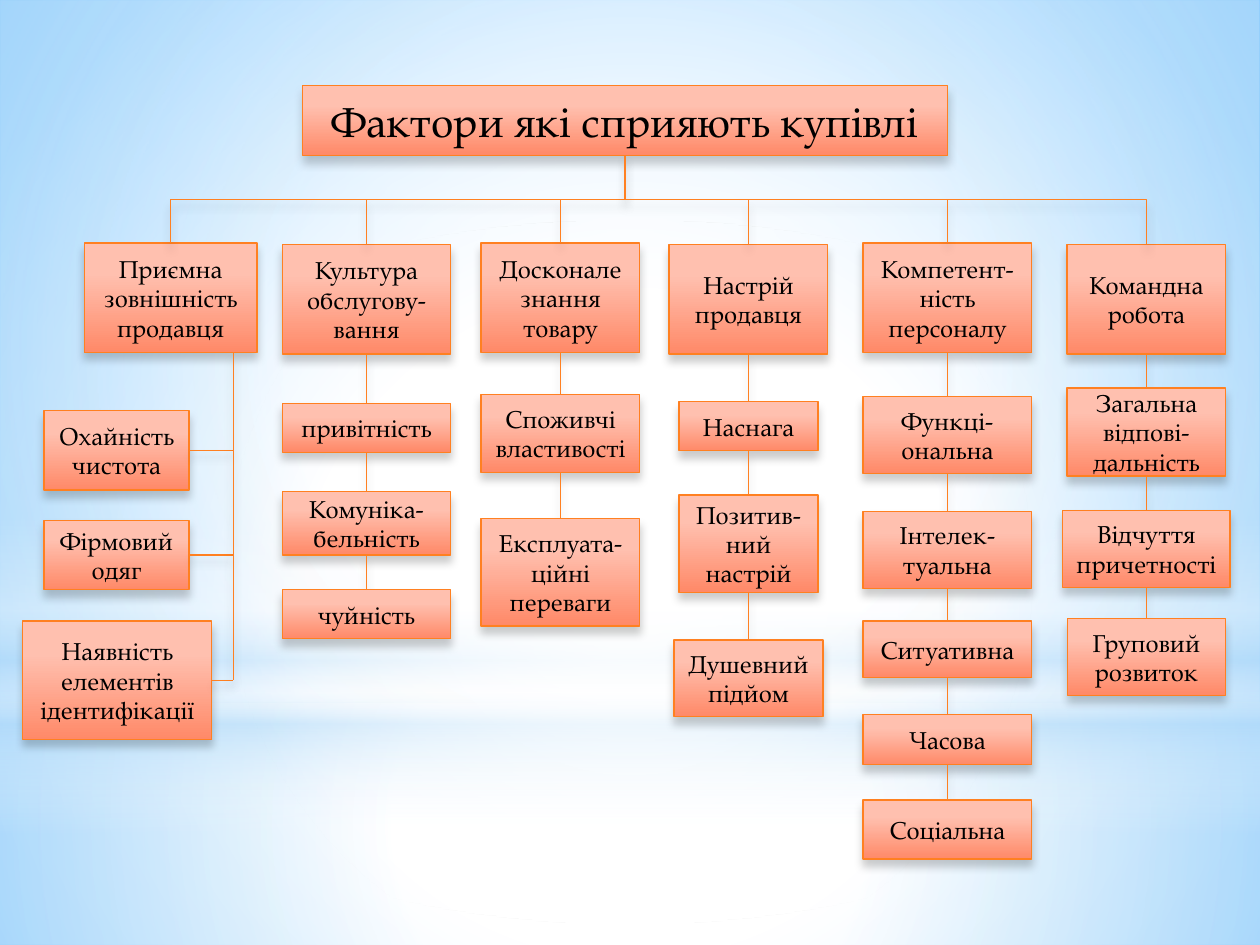
from lxml import etree
from pptx import Presentation
from pptx.dml.color import RGBColor
from pptx.enum.shapes import MSO_CONNECTOR, MSO_SHAPE
from pptx.enum.text import MSO_ANCHOR, MSO_AUTO_SIZE, PP_ALIGN
from pptx.oxml.ns import qn
from pptx.util import Cm, Pt

RECT, OVAL = MSO_SHAPE.RECTANGLE, MSO_SHAPE.OVAL
LINE, ELBOW = MSO_CONNECTOR.STRAIGHT, MSO_CONNECTOR.ELBOW
MIDDLE, CENTER, NO_FIT = MSO_ANCHOR.MIDDLE, PP_ALIGN.CENTER, MSO_AUTO_SIZE.NONE
FONT, EDGE, INK, WHITE, SKY = "TeX Gyre Pagella", "FF8021", "000000", "FFFFFF", "B4DCFA"
PEACH = [(28, "FFC0AF", 100), (100, "FF8968", 100)]
MID = (50, 50, 50, 50)
TITLE = (6.1, 1.73, 13, 1.4)
BUS = 4.03

# Head text, head box, then items: text, drop below the head's top, width, height
STACKS = [
    ("Культура обслугову-вання", (5.69, 4.93, 3.4, 2.21), [
        ("привітність", 3.2, 3.4, 0.99),
        ("Комуніка-бельність", 4.98, 3.4, 1.28),
        ("чуйність", 6.96, 3.4, 0.99)]),
    ("Досконале знання товару", (9.7, 4.9, 3.2, 2.21), [
        ("Споживчі властивості", 3.05, 3.2, 1.57),
        ("Експлуата-ційні переваги", 5.56, 3.2, 2.16)]),
    ("Настрій продавця", (13.49, 4.93, 3.2, 2.21), [
        ("Наснага", 3.17, 2.8, 0.99),
        ("Позитив-ний настрій", 5.05, 2.8, 1.96),
        ("Душевний підйом", 7.97, 3, 1.55)]),
    ("Компетент-ність персоналу", (17.4, 4.9, 3.4, 2.21), [
        ("Функці-ональна", 3.1, 3.4, 1.55),
        ("Інтелек-туальна", 5.41, 3.4, 1.55),
        ("Ситуативна", 7.62, 3.4, 1.14),
        ("Часова", 9.5, 3.4, 1.02),
        ("Соціальна", 11.23, 3.4, 1.19)]),
    ("Командна робота", (21.51, 4.93, 3.2, 2.21), [
        ("Загальна відпові-дальність", 2.89, 3.2, 1.78),
        ("Відчуття причетності", 5.36, 3.38, 1.55),
        ("Груповий розвиток", 7.54, 3.18, 1.55)]),
]
SIDE_HEAD = ("Приємна зовнішність продавця", (1.7, 4.9, 3.48, 2.21))
# Text, then left and top from the head's corner, width, height
SIDE = [
    ("Охайність чистота", -0.81, 3.38, 2.92, 1.6),
    ("Фірмовий одяг", -0.81, 5.59, 2.92, 1.4),
    ("Наявність елементів ідентифікації", -1.24, 7.62, 3.81, 2.39),
]


def color(text):
    return RGBColor.from_string(text)


def blend(item, root, stops, focus=None):
    """Fill with stops of (place, colour, opacity), downward or around focus."""
    item.fill.gradient()
    grad = next(root.iter(qn("a:gradFill")))
    for old in list(grad):
        grad.remove(old)
    row = etree.SubElement(grad, qn("a:gsLst"))
    for pos, tone, alpha in stops:
        stop = etree.SubElement(row, qn("a:gs"), pos=str(pos * 1000))
        ink = etree.SubElement(stop, qn("a:srgbClr"), val=tone)
        if alpha < 100:
            etree.SubElement(ink, qn("a:alpha"), val=str(alpha * 1000))
    if focus:
        way = etree.SubElement(grad, qn("a:path"))
        way.set("path", "circle")
        rect = etree.SubElement(way, qn("a:fillToRect"))
        for side, part in zip("ltrb", focus):
            rect.set(side, str(part * 1000))
    else:
        etree.SubElement(grad, qn("a:lin"), ang="5400000", scaled="0")


def trim(shape):
    """Give a box or connector its thin edge and soft shadow."""
    shape.line.color.rgb = color(EDGE)
    shape.line.width = Pt(0.75)
    fx = etree.SubElement(shape.element.spPr, qn("a:effectLst"))
    cast = etree.SubElement(fx, qn("a:outerShdw"), blurRad=str(Pt(5)),
                            dist=str(Pt(4)), dir="5400000", algn="ctr",
                            rotWithShape="0")
    ink = etree.SubElement(cast, qn("a:srgbClr"), val=INK)
    etree.SubElement(ink, qn("a:alpha"), val="20000")


def dress(shape, text, size):
    blend(shape, shape.element, PEACH)
    trim(shape)
    frame = shape.text_frame
    frame.word_wrap = True
    frame.auto_size = NO_FIT
    frame.vertical_anchor = MIDDLE
    para = frame.paragraphs[0]
    para.alignment = CENTER
    run = para.add_run()
    run.text = text
    run.font.size = Pt(size)
    run.font.name = FONT
    run.font.color.rgb = color(INK)


def box(slide, text, area):
    shape = slide.shapes.add_shape(RECT, *map(Cm, area))
    dress(shape, text, 14)


def link(slide, *ends, kind=LINE):
    line = slide.shapes.add_connector(kind, *map(Cm, ends))
    trim(line)
    return line


def elbow(slide, x, y, end_x, end_y):
    """Run up from x, y, across at half height, and up to the end."""
    mid_x, mid_y = (x + end_x) / 2, (y + end_y) / 2
    half, rise = (end_x - x) / 2, (y - end_y) / 2
    line = link(slide, mid_x - rise, mid_y - half,
                mid_x + rise, mid_y + half, kind=ELBOW)
    line.element.spPr.find(qn("a:xfrm")).set("rot", "16200000")


def backdrop(slide, wide, high):
    blend(slide.background, slide.element,
          [(0, WHITE, 100), (42, WHITE, 100), (100, "63BCFF", 100)],
          (24, 44, 24, 12))
    split = 14.17
    layers = [
        (RECT, split, high - split,
         [(0, WHITE, 91), (37, WHITE, 76), (100, SKY, 79)], MID),
        (RECT, 0, split,
         [(0, WHITE, 89), (48, WHITE, 62), (100, SKY, 79)], MID),
        (RECT, 10.46, 6.35,
         [(0, WHITE, 0), (29, WHITE, 30), (45, SKY, 40), (55, WHITE, 26),
          (65, SKY, 60), (100, WHITE, 0)], None),
        (OVAL, 4.45, split, [(0, WHITE, 100), (56, WHITE, 0)], MID),
    ]
    for kind, top, tall, stops, focus in layers:
        shape = slide.shapes.add_shape(kind, 0, Cm(top), Cm(wide), Cm(tall))
        blend(shape, shape.element, stops, focus)
        shape.line.fill.background()
        shape.shadow.inherit = False


def heading(slide, area):
    title = slide.shapes.title
    slide.shapes.element.append(title.element)  # above the backdrop
    title.left, title.top, title.width, title.height = map(Cm, area)
    dress(title, "Фактори які сприяють купівлі", 24)


def stack(slide, text, area, items):
    """Place a head with its items centred in a chain below."""
    left, top, wide, high = area
    mid = left + wide / 2
    box(slide, text, area)
    foot = top + high
    for name, drop, span, tall in items:
        link(slide, mid, foot, mid, top + drop)
        box(slide, name, (mid - span / 2, top + drop, span, tall))
        foot = top + drop + tall


def branch(slide, text, area, items):
    """Place a head with its items hung to the left of a trunk."""
    left, top, wide, high = area
    trunk = left + 3
    box(slide, text, area)
    for name, shift, drop, span, tall in items:
        box(slide, name, (left + shift, top + drop, span, tall))
        mid = top + drop + tall / 2
        link(slide, left + shift + span, mid, trunk, mid)
    link(slide, trunk, top + high, trunk, mid)


def main():
    deck = Presentation()
    deck.slide_width, deck.slide_height = Cm(25.4), Cm(19.05)
    slide = deck.slides.add_slide(deck.slide_layouts[5])
    backdrop(slide, 25.4, 19.05)
    heading(slide, TITLE)
    branch(slide, *SIDE_HEAD, SIDE)
    for text, area, items in STACKS:
        stack(slide, text, area, items)
    root, base = TITLE[0] + TITLE[2] / 2, TITLE[1] + TITLE[3]
    heads = [SIDE_HEAD[1]] + [area for _, area, _ in STACKS]
    tips = [(left + wide / 2, top) for left, top, wide, _ in heads]
    for x, y in (tips[0], tips[-1]):
        elbow(slide, x, y, root, base)
    for x, y in tips[1:-1]:
        link(slide, x, y, x, BUS)
    deck.save("out.pptx")


if __name__ == "__main__":
    main()
